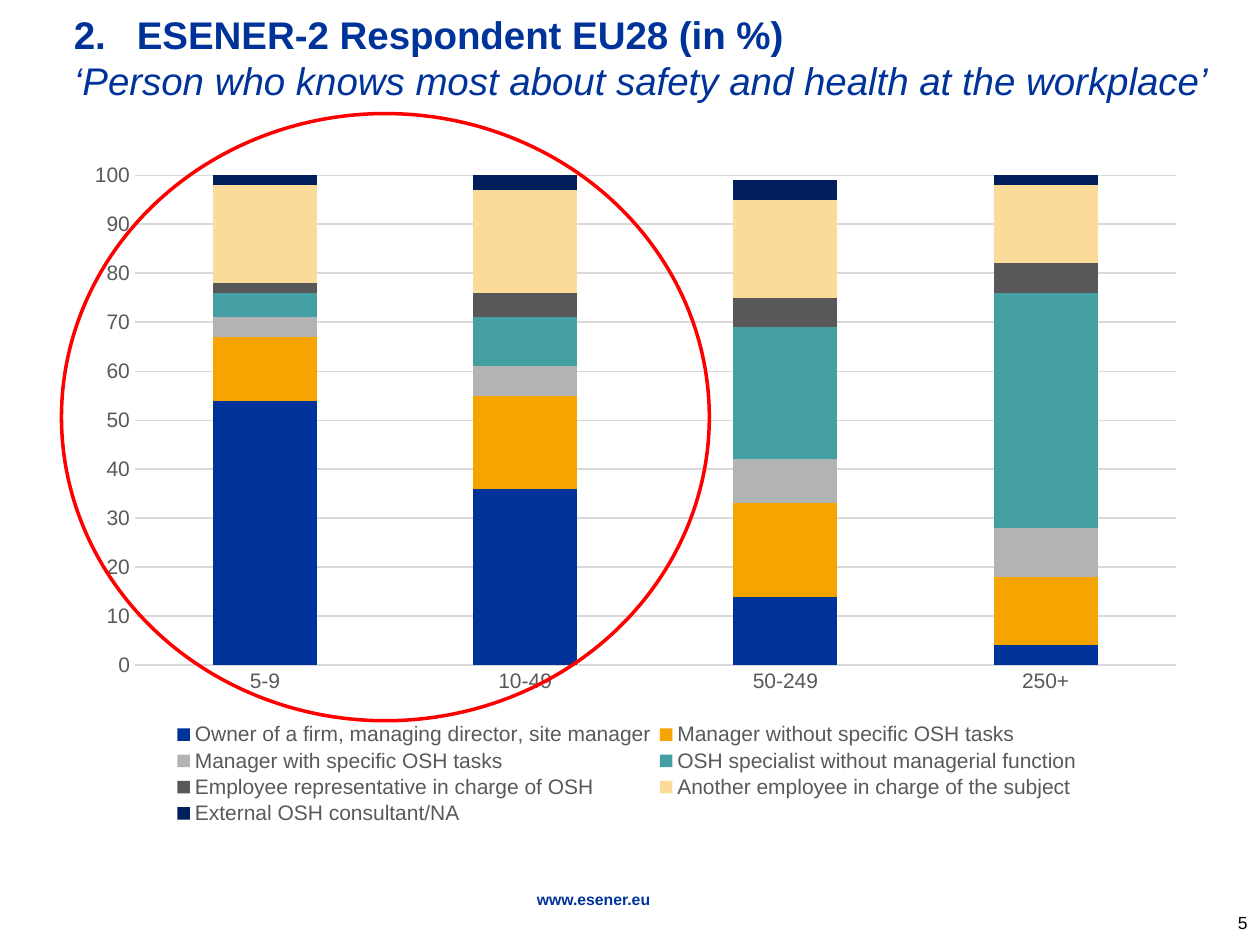
from lxml import etree
from pptx import Presentation
from pptx.chart.data import CategoryChartData
from pptx.dml.color import RGBColor
from pptx.enum.chart import XL_CHART_TYPE, XL_LEGEND_POSITION, XL_TICK_MARK
from pptx.enum.shapes import MSO_SHAPE
from pptx.enum.text import MSO_ANCHOR, PP_ALIGN
from pptx.oxml.ns import qn
from pptx.util import Cm, Pt

FONT = "Arial"
BLUE = RGBColor(0x00, 0x33, 0x99)
BLACK = RGBColor(0x00, 0x00, 0x00)
RED = RGBColor(0xFF, 0x00, 0x00)
AXIS_GREY = RGBColor(0x59, 0x59, 0x59)
GRID_GREY = RGBColor(0xD9, 0xD9, 0xD9)
ORANGE = RGBColor(0xF6, 0xA4, 0x00)
SILVER = RGBColor(0xB1, 0xB3, 0xB4)
TEAL = RGBColor(0x44, 0x9F, 0xA2)
DARK_GREY = RGBColor(0x58, 0x58, 0x5A)
SAND = RGBColor(0xFB, 0xDB, 0x99)
NAVY = RGBColor(0x00, 0x1F, 0x5C)
NO_TICK = XL_TICK_MARK.NONE

# Content
TITLE = "2.\tESENER-2 Respondent EU28 (in %)"
SUBTITLE = "‘Person who knows most about safety and health at the workplace’"
WEBSITE = "www.esener.eu"
PAGE_NUMBER = "5"
COMPANY_SIZES = ["5-9", "10-49", "50-249", "250+"]
RESPONDENTS = [
    ("Owner of a firm, managing director, site manager", (54, 36, 14, 4), BLUE),
    ("Manager without specific OSH tasks", (13, 19, 19, 14), ORANGE),
    ("Manager with specific OSH tasks", (4, 6, 9, 10), SILVER),
    ("OSH specialist without managerial function", (5, 10, 27, 48), TEAL),
    ("Employee representative in charge of OSH", (2, 5, 6, 6), DARK_GREY),
    ("Another employee in charge of the subject", (20, 21, 20, 16), SAND),
    ("External OSH consultant/NA", (2, 3, 4, 2), NAVY),
]

# Left, top, width, height in centimetres
TITLE_BOX = (1.24, 0.91, 23.44, 1.37)
CHART_BOX = (1.35, 3.12, 22.81, 13.72)
ELLIPSE_BOX = (1.24, 2.29, 13.06, 12.24)
WEBSITE_BOX = (3.86, 17.98, 16.21, 0.28)
NUMBER_BOX = (23.7, 18.08, 1.7, 1.02)

# Left, top, width, height as shares of the chart
PLOT_LAYOUT = (0.06, 0.03, 0.92, 0.72)
LEGEND_LAYOUT = (0.09, 0.83, 0.81, 0.16)


def to_cm(box):
    return [Cm(length) for length in box]


def set_font(font, size, color, bold=False, italic=False):
    font.name, font.size = FONT, Pt(size)
    font.color.rgb = color
    font.bold, font.italic = bold, italic


def add_text(slide, box, anchor=MSO_ANCHOR.TOP):
    frame = slide.shapes.add_textbox(*to_cm(box)).text_frame
    frame.word_wrap = True
    frame.vertical_anchor = anchor
    return frame


def make_layout(box, inner=False):
    layout = etree.Element(qn("c:layout"))
    manual = etree.SubElement(layout, qn("c:manualLayout"))
    settings = [("layoutTarget", "inner")] if inner else []
    settings += [("xMode", "edge"), ("yMode", "edge")]
    settings += zip("xywh", box)
    for name, value in settings:
        etree.SubElement(manual, qn(f"c:{name}")).set("val", str(value))
    return layout


def add_title(slide):
    frame = add_text(slide, TITLE_BOX, MSO_ANCHOR.MIDDLE)
    frame.margin_right = 0
    frame.margin_bottom = Cm(1.02)
    heading = frame.paragraphs[0]
    heading.text = TITLE
    tabs = etree.SubElement(heading._p.get_or_add_pPr(), qn("a:tabLst"))
    etree.SubElement(tabs, qn("a:tab"), pos=str(Cm(1.27)), algn="l")
    set_font(heading.font, 22, BLUE, bold=True)
    subtitle = frame.add_paragraph()
    subtitle.text = SUBTITLE
    set_font(subtitle.font, 22, BLUE, italic=True)


def add_respondent_chart(slide):
    data = CategoryChartData(number_format="0")
    data.categories = COMPANY_SIZES
    for name, values, _ in RESPONDENTS:
        data.add_series(name, values)
    chart = slide.shapes.add_chart(
        XL_CHART_TYPE.COLUMN_STACKED, *to_cm(CHART_BOX), data).chart
    set_font(chart.font, 12, AXIS_GREY)
    chart.has_title = False

    # Columns
    plot = chart.plots[0]
    plot.gap_width, plot.overlap = 150, 100
    plot.vary_by_categories = False
    for series, (_, _, color) in zip(plot.series, RESPONDENTS):
        series.format.fill.solid()
        series.format.fill.fore_color.rgb = color

    # Axes
    category_axis, value_axis = chart.category_axis, chart.value_axis
    for axis in (category_axis, value_axis):
        axis.major_tick_mark = axis.minor_tick_mark = NO_TICK
        set_font(axis.tick_labels.font, 12, AXIS_GREY)
    value_axis.minimum_scale, value_axis.maximum_scale = 0, 100
    value_axis.major_unit = 10
    value_axis.tick_labels.number_format = "0"
    value_axis.tick_labels.number_format_is_linked = False
    value_axis.format.line.fill.background()
    for line in (category_axis.format.line, value_axis.major_gridlines.format.line):
        line.color.rgb = GRID_GREY
        line.width = Pt(0.75)

    # Legend and layout
    chart.has_legend = True
    legend = chart.legend
    legend.position = XL_LEGEND_POSITION.BOTTOM
    legend.include_in_layout = False
    set_font(legend.font, 12, AXIS_GREY)
    plot_area = chart._chartSpace.chart.plotArea
    for element in (plot_area, legend._element):
        for old_layout in element.findall(qn("c:layout")):
            element.remove(old_layout)
    plot_area.insert(0, make_layout(PLOT_LAYOUT, inner=True))
    legend._element.find(qn("c:legendPos")).addnext(make_layout(LEGEND_LAYOUT))


def add_highlight(slide):
    ellipse = slide.shapes.add_shape(MSO_SHAPE.OVAL, *to_cm(ELLIPSE_BOX))
    ellipse.shadow.inherit = False
    ellipse.fill.background()
    ellipse.line.color.rgb = RED
    ellipse.line.width = Pt(2)


def add_footer(slide):
    number = add_text(slide, NUMBER_BOX, MSO_ANCHOR.MIDDLE).paragraphs[0]
    number.text = PAGE_NUMBER
    number.alignment = PP_ALIGN.RIGHT
    set_font(number.font, 10, BLACK)

    frame = add_text(slide, WEBSITE_BOX)
    frame.margin_left = frame.margin_right = 0
    frame.margin_top = frame.margin_bottom = 0
    website = frame.paragraphs[0]
    website.text = WEBSITE
    website.alignment = PP_ALIGN.CENTER
    website.line_spacing = 0.9
    set_font(website.font, 9, BLUE, bold=True)


def main():
    presentation = Presentation()
    presentation.slide_width, presentation.slide_height = Cm(25.4), Cm(19.05)
    slide = presentation.slides.add_slide(presentation.slide_layouts[6])
    add_footer(slide)
    add_title(slide)
    add_respondent_chart(slide)
    add_highlight(slide)
    presentation.save("out.pptx")


if __name__ == "__main__":
    main()
